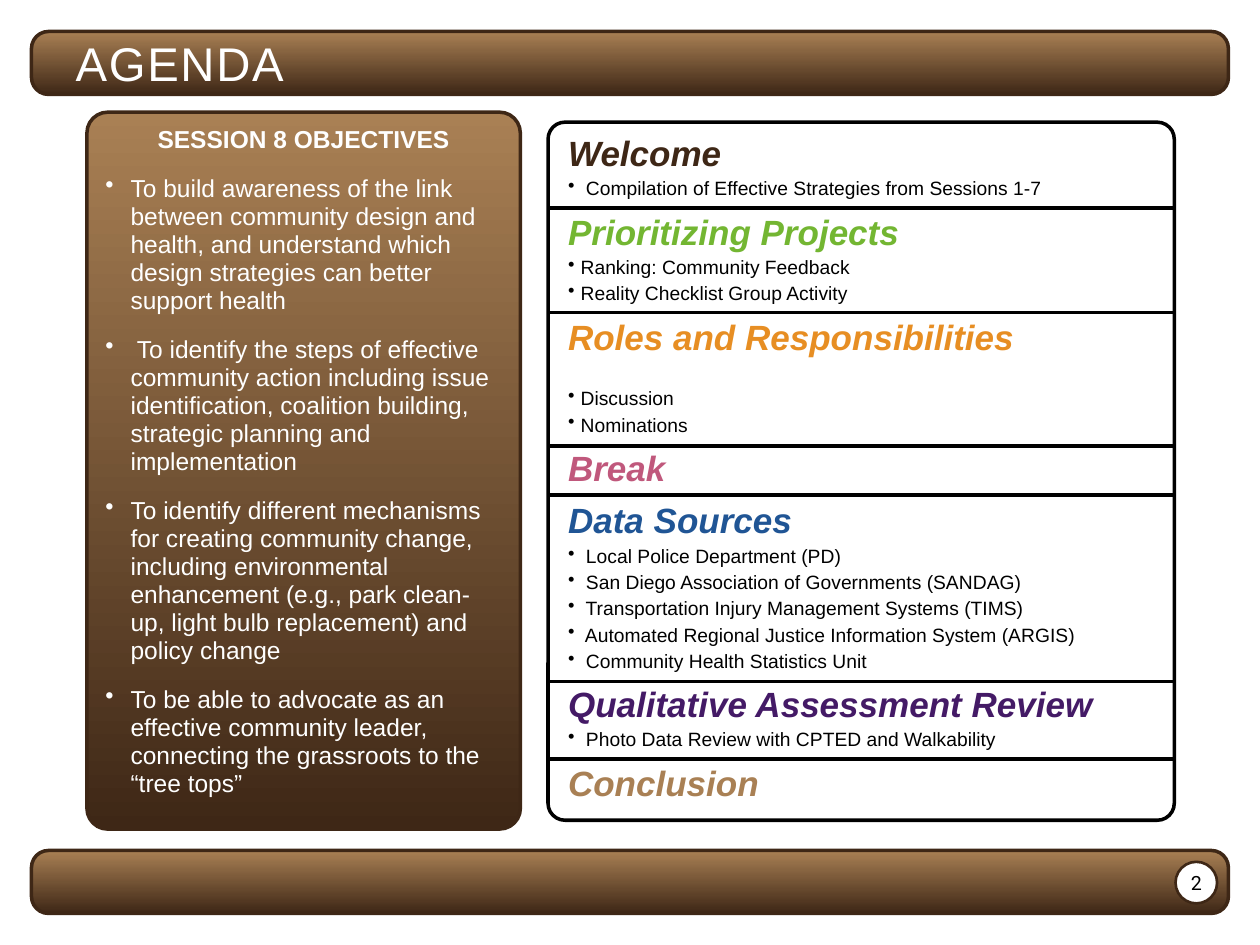
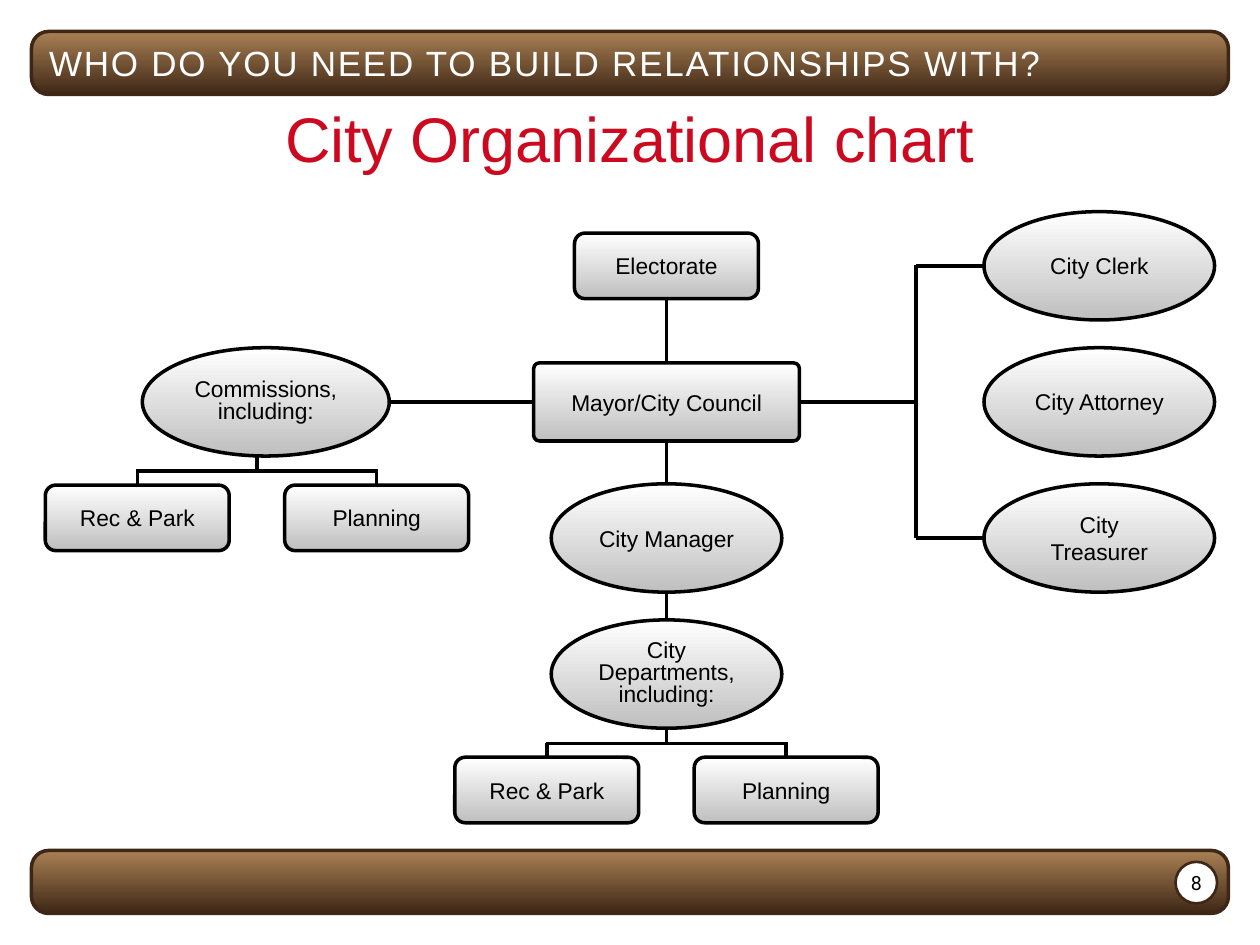
import dataclasses

import pptx
import pptx.dml.color
import pptx.enum.shapes
import pptx.enum.text
import pptx.oxml
import pptx.oxml.ns
import pptx.util

Pt = pptx.util.Pt
KIND = pptx.enum.shapes.MSO_SHAPE
ALIGN = pptx.enum.text.PP_ALIGN
ANCHOR = pptx.enum.text.MSO_ANCHOR
FIT = pptx.enum.text.MSO_AUTO_SIZE

# The slide is a grid of 100 columns and 75 rows
WIDE, HIGH = pptx.util.Inches(10), pptx.util.Inches(7.5)
COLS, ROWS = 100, 75


@dataclasses.dataclass(frozen=True)
class Theme:
    font: str = "Arial"
    digit: str = "Roboto"
    dark: str = "3E2716"
    tan: str = "A98054"
    gray: str = "BFBFBF"
    white: str = "FFFFFF"
    black: str = "000000"
    red: str = "CD0920"
    green: str = "73B632"
    orange: str = "E78E23"
    pink: str = "C0587C"
    blue: str = "205595"
    purple: str = "441A66"
    head: float = 20
    item: float = 11
    body: float = 14
    node: float = 13
    chart: float = 36
    page: float = 11.2
    line: float = 2


T = Theme()

AGENDA = [
    ("Welcome", T.dark, [" Compilation of Effective Strategies from Sessions 1-7"]),
    ("Prioritizing Projects", T.green,
     ["Ranking: Community Feedback", "Reality Checklist Group Activity"]),
    ("Roles and Responsibilities", T.orange, ["Discussion", "Nominations"]),
    ("Break", T.pink, []),
    ("Data Sources", T.blue,
     [" Local Police Department (PD)",
      " San Diego Association of Governments (SANDAG)",
      " Transportation Injury Management Systems (TIMS)",
      " Automated Regional Justice Information System (ARGIS)",
      " Community Health Statistics Unit"]),
    ("Qualitative Assessment Review", T.purple,
     [" Photo Data Review with CPTED and Walkability"]),
    ("Conclusion", T.tan, []),
]
RULES = [16.5, 24.8, 35.4, 39.3, 54.1, 60.25]

GOALS = [
    "To build awareness of the link between community design and health, "
    "and understand which design strategies can better support health",
    " To identify the steps of effective community action including issue "
    "identification, coalition building, strategic planning and implementation",
    "To identify different mechanisms for creating community change, including "
    "environmental enhancement (e.g., park clean-up, light bulb replacement) "
    "and policy change",
    "To be able to advocate as an effective community leader, connecting the "
    "grassroots to the “tree tops”",
]


# Basic helpers
def across(col):
    return round(WIDE * col / COLS)


def down(row):
    return round(HIGH * row / ROWS)


def area(x, y, w, h):
    return across(x), down(y), across(w), down(h)


def rgb(code):
    return pptx.dml.color.RGBColor.from_string(code)


def style(thing, **values):
    for name, value in values.items():
        setattr(thing, name, value)


def paint(fill, colors):
    """Fill with nothing, one colour, or a gradient from bottom to top."""
    if not colors:
        fill.background()
    elif len(colors) == 1:
        fill.solid()
        fill.fore_color.rgb = rgb(colors[0])
    else:
        fill.gradient()
        fill.gradient_angle = 90
        for stop, code in zip(fill.gradient_stops, colors):
            stop.color.rgb = rgb(code)


# Text
def write(para, text, size, color, font=T.font, bold=False, italic=False, **form):
    run = para.add_run()
    run.text = text
    style(run.font, name=font, size=Pt(size), bold=bold, italic=italic)
    run.font.color.rgb = rgb(color)
    style(para, **form)
    return run


def bullet(para, cols):
    props = para._p.get_or_add_pPr()
    props.set("marL", str(across(cols)))
    props.set("indent", str(-across(cols)))
    mark = pptx.oxml.parse_xml(
        f'<a:buChar {pptx.oxml.ns.nsdecls("a")} char="•"/>')
    props.append(mark)


def textbox(slide, *place):
    frame = slide.shapes.add_textbox(*area(*place)).text_frame
    frame.word_wrap = True
    return frame


# Shapes and lines
def shape(slide, kind, place, colors=(), edge=T.black, width=T.line, adj=None):
    item = slide.shapes.add_shape(kind, *area(*place))
    item.shadow.inherit = False
    paint(item.fill, colors)
    item.line.color.rgb = rgb(edge)
    item.line.width = Pt(width)
    if adj is not None:
        item.adjustments[0] = adj
    return item


def rule(slide, x1, y1, x2, y2):
    line = slide.shapes.add_connector(
        pptx.enum.shapes.MSO_CONNECTOR.STRAIGHT,
        across(x1), down(y1), across(x2), down(y2))
    line.line.color.rgb = rgb(T.black)
    line.line.width = Pt(T.line)
    line._element.spPr.append(pptx.oxml.parse_xml(
        f'<a:effectLst {pptx.oxml.ns.nsdecls("a")}/>'))


# Shared slide frame: two bands, title and page number
def band(slide, y):
    return shape(slide, KIND.ROUNDED_RECTANGLE, (2.5, y, 95, 5),
                 (T.dark, T.tan), T.dark, adj=0.271)


def base(deck, text, size, inset, page):
    slide = deck.slides.add_slide(deck.slide_layouts[5])
    title = slide.shapes.title
    for y in (67.5, 2.5):
        title._element.addprevious(band(slide, y)._element)
    left, top, width, height = area(2.5, 2.5, 95, 5)
    style(title, left=left, top=top, width=width, height=height)
    style(title.text_frame, auto_size=FIT.NONE, word_wrap=True,
          vertical_anchor=ANCHOR.MIDDLE, margin_left=across(inset),
          margin_top=0, margin_bottom=0)
    run = write(title.text_frame.paragraphs[0], text, size, T.white,
                alignment=ALIGN.LEFT)
    run.font._element.set("spc", "100")

    badge = shape(slide, KIND.OVAL, (93.3, 68.4, 3.3, 3.3),
                  (T.white,), T.dark, 1.5)
    style(badge.text_frame, margin_left=0, margin_right=0, margin_top=0,
          margin_bottom=0, word_wrap=False, vertical_anchor=ANCHOR.MIDDLE)
    write(badge.text_frame.paragraphs[0], page, T.page, T.black, T.digit,
          alignment=ALIGN.CENTER)
    return slide


# Agenda slide
def goals(slide):
    panel = shape(slide, KIND.ROUNDED_RECTANGLE, (6.9, 8.9, 34.4, 56.9),
                  (T.dark, T.tan), T.dark, adj=0.048)
    frame = panel.text_frame
    style(frame, word_wrap=True, vertical_anchor=ANCHOR.TOP)
    write(frame.paragraphs[0], "SESSION 8 OBJECTIVES", T.body, T.white,
          bold=True, alignment=ALIGN.CENTER)
    for goal in GOALS:
        para = frame.add_paragraph()
        write(para, goal, T.body, T.white, alignment=ALIGN.LEFT,
              line_spacing=Pt(16), space_before=Pt(12))
        bullet(para, 2)


def topics(slide):
    shape(slide, KIND.ROUNDED_RECTANGLE, (43.5, 9.7, 49.7, 55.4), adj=0.027)
    for y in RULES:
        rule(slide, 43.5, y, 93.1, y)
    frame = textbox(slide, 44.1, 11.2, 49.2, 53.6)
    step = Pt(15)
    for n, (name, color, items) in enumerate(AGENDA):
        para = frame.add_paragraph() if n else frame.paragraphs[0]
        write(para, name, T.head, color, bold=True, italic=True,
              line_spacing=step, space_before=step if n else 0)
        for item in items:
            para = frame.add_paragraph()
            gap = step if item == "Discussion" else 0
            write(para, item, T.item, T.black, line_spacing=step,
                  space_before=gap)
            bullet(para, 1)


# Organization slide: nodes are placed by their centres
def node(slide, kind, x, y, w, h, lines, adj=None, tight=False):
    item = shape(slide, kind, (x - w / 2, y - h / 2, w, h),
                 (T.gray, T.white), adj=adj)
    frame = item.text_frame
    style(frame, word_wrap=True, vertical_anchor=ANCHOR.MIDDLE)
    for n, text in enumerate(lines):
        para = frame.add_paragraph() if n else frame.paragraphs[0]
        write(para, text, T.node, T.black, alignment=ALIGN.CENTER)
        if tight:
            para.line_spacing = Pt(12.6)


def oval(slide, x, y, *lines, w=18.3, tight=False):
    node(slide, KIND.OVAL, x, y, w, 8.6, lines, tight=tight)


def box(slide, x, y, text, w=14.6, h=5.2, adj=0.161):
    node(slide, KIND.ROUNDED_RECTANGLE, x, y, w, h, [text], adj)


def fork(slide, x, y):
    """Branch from the oval at row y to its two boxes below."""
    bus = y + 5.5
    rule(slide, x, y + 4.2, x, bus)
    rule(slide, x - 9.6, bus, x + 9.6, bus)
    for dx, text in ((-9.5, "Rec & Park"), (9.5, "Planning")):
        rule(slide, x + dx, bus, x + dx, y + 6.6)
        box(slide, x + dx, y + 9.2, text)


def chart(slide):
    mid, stem, side, bar = 52.9, 20.4, 87.25, 72.7
    rows = [21.1 + 10.8 * n for n in range(4)]
    top, hub, low, last = rows

    rule(slide, mid, top, mid, last)
    rule(slide, stem, hub, bar, hub)
    rule(slide, bar, top - 0.1, bar, low)
    for y in (top, low):
        rule(slide, bar, y, side - 9, y)
    fork(slide, stem, hub)
    fork(slide, mid, last)

    for y, name in zip(rows, ("City Clerk", "City Attorney", "City Treasurer")):
        oval(slide, side, y, name)
    oval(slide, 21.1, hub, "Commissions,", "including:", w=19.6, tight=True)
    box(slide, mid, top, "Electorate")
    box(slide, mid, hub, "Mayor/City Council", 21.1, 6.2, 0.076)
    oval(slide, mid, low, "City Manager")
    oval(slide, mid, last, "City Departments, including:", tight=True)

    frame = textbox(slide, 11.8, 7.4, 76.4, 7.1)
    write(frame.paragraphs[0], "City Organizational chart", T.chart, T.red,
          alignment=ALIGN.CENTER)


def main():
    deck = pptx.Presentation()
    style(deck, slide_width=WIDE, slide_height=HIGH)
    first = base(deck, "AGENDA", 27, 3.5, "2")
    goals(first)
    topics(first)
    second = base(deck, "WHO DO YOU NEED TO BUILD RELATIONSHIPS WITH?",
                  20, 1.4, "8")
    chart(second)
    deck.save("out.pptx")


if __name__ == "__main__":
    main()
